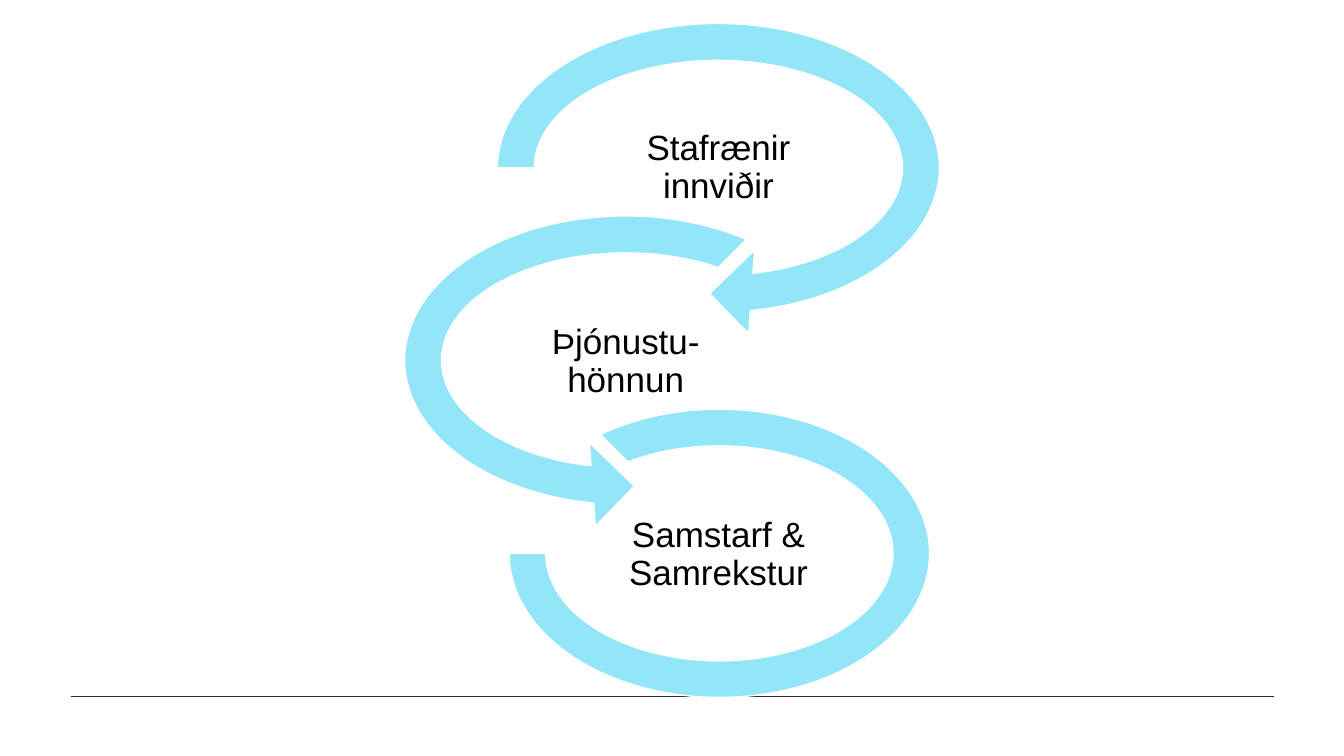
from dataclasses import dataclass

from pptx import Presentation
from pptx.dml.color import RGBColor
from pptx.enum.shapes import MSO_CONNECTOR, MSO_SHAPE
from pptx.enum.text import MSO_ANCHOR, PP_ALIGN
from pptx.oxml.ns import qn
from pptx.slide import Slide
from pptx.util import Emu, Pt

EMU_PER_PX = 9144


@dataclass(frozen=True)
class Theme:
    font: str = "Arial"
    label_size: float = 25
    text: str = "000000"
    ring: str = "93E5FA"
    ring_edge: str = "FFFFFF"
    ring_edge_width: float = 1
    baseline: str = "2D2D2D"
    baseline_width: float = 1.25


@dataclass(frozen=True)
class Box:
    left: int
    top: int
    width: int
    height: int

    def emu(self) -> tuple[Emu, Emu, Emu, Emu]:
        return px(self.left), px(self.top), px(self.width), px(self.height)


@dataclass(frozen=True)
class Stage:
    label: str
    label_box: Box
    ring: MSO_SHAPE
    ring_box: Box
    adjustments: tuple[float, ...]


THEME = Theme()
STAGES = (
    Stage("Stafrænir innviðir", Box(595, 107, 235, 120),
          MSO_SHAPE.CIRCULAR_ARROW, Box(470, 0, 485, 333),
          (0.11, 11.42, 45, 108, 0.125)),
    Stage("Þjónustu-hönnun", Box(528, 313, 185, 92),
          MSO_SHAPE.LEFT_CIRCULAR_ARROW, Box(378, 191, 485, 333),
          (0.11, 11.42, 63, 189, 0.125)),
    Stage("Samstarf & Samrekstur", Box(620, 505, 185, 92),
          MSO_SHAPE.BLOCK_ARC, Box(505, 406, 417, 286),
          (135, 108, 0.127)),
)


def px(length: int) -> Emu:
    return Emu(length * EMU_PER_PX)


def rgb(value: str) -> RGBColor:
    return RGBColor.from_string(value)


def draw_baseline(slide: Slide, left: int, right: int, y: int) -> None:
    baseline = slide.shapes.add_connector(
        MSO_CONNECTOR.STRAIGHT, px(left), px(y), px(right), px(y))
    baseline.line.color.rgb = rgb(THEME.baseline)
    baseline.line.width = Pt(THEME.baseline_width)
    properties = baseline._element.spPr
    properties.append(properties.makeelement(qn("a:effectLst"), {}))


def draw_ring(slide: Slide, stage: Stage) -> None:
    ring = slide.shapes.add_shape(stage.ring, *stage.ring_box.emu())
    for index, adjustment in enumerate(stage.adjustments):
        ring.adjustments[index] = adjustment
    ring.shadow.inherit = False
    ring.fill.solid()
    ring.fill.fore_color.rgb = rgb(THEME.ring)
    ring.line.color.rgb = rgb(THEME.ring_edge)
    ring.line.width = Pt(THEME.ring_edge_width)


def draw_text(slide: Slide, text: str, box: Box, *, size: float = THEME.label_size,
              color: str = THEME.text, align: PP_ALIGN = PP_ALIGN.CENTER,
              line_spacing: float = 0.9, inset: int = 2) -> None:
    frame = slide.shapes.add_textbox(*box.emu()).text_frame
    frame.word_wrap = True
    frame.vertical_anchor = MSO_ANCHOR.MIDDLE
    frame.margin_left = frame.margin_right = px(inset)
    frame.margin_top = frame.margin_bottom = px(inset)
    paragraph = frame.paragraphs[0]
    paragraph.alignment = align
    paragraph.line_spacing = line_spacing
    run = paragraph.add_run()
    run.text = text
    run.font.name = THEME.font
    run.font.size = Pt(size)
    run.font.color.rgb = rgb(color)


def main() -> None:
    presentation = Presentation()
    presentation.slide_width = px(1333)
    presentation.slide_height = px(750)
    slide = presentation.slides.add_slide(presentation.slide_layouts[6])
    draw_baseline(slide, 70, 1264, 691)
    for stage in STAGES:
        draw_ring(slide, stage)
        draw_text(slide, stage.label, stage.label_box)
    presentation.save("out.pptx")


if __name__ == "__main__":
    main()
